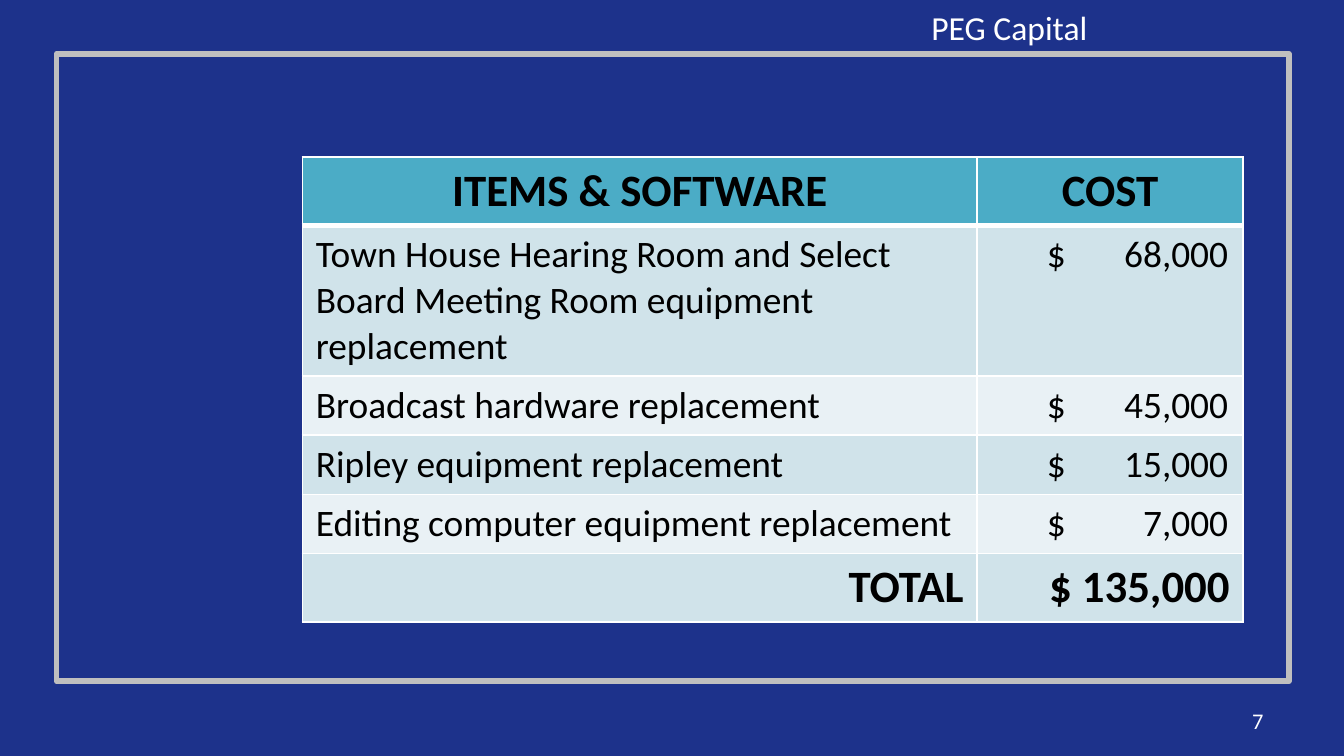
from dataclasses import dataclass

from lxml.etree import SubElement
from pptx import Presentation
from pptx.dml.color import RGBColor
from pptx.enum.shapes import MSO_SHAPE as Shape
from pptx.enum.text import MSO_ANCHOR as Anchor, MSO_AUTO_SIZE as AutoSize, PP_ALIGN as Align
from pptx.oxml.ns import qn
from pptx.util import Inches, Pt

TITLE = "PEG Capital"
PAGE_NUMBER = "7"
HEADER = ("ITEMS & SOFTWARE", "COST")
ITEMS = [
    ("Town House Hearing Room and Select Board Meeting Room equipment replacement", "68,000"),
    ("Broadcast hardware replacement", "45,000"),
    ("Ripley equipment replacement", "15,000"),
    ("Editing computer equipment replacement", "7,000"),
]
TOTAL = ("TOTAL", "$ 135,000")

WIDTH = 10
HEIGHT = WIDTH * 9 / 16
FRAME = (0.42, 0.4, 9.17, 4.67)
TITLE_BOX = (6.83, 0, 1.67, 0.42)
NUMBER_BOX = (7.17, 5.21, 2.33, 0.3)
TABLE_LEFT, TABLE_TOP = 2.25, 1.17
COLUMNS = (5.02, 1.98)
ROWS = (0.5, 1.1, 0.44, 0.44, 0.44, 0.5)
DOLLAR_INSET, AMOUNT_TAB = 0.52, 1.35


@dataclass(frozen=True)
class Theme:
    font: str = "Calibri"
    background: str = "1D328B"
    frame: str = "BFBFBF"
    light: str = "FFFFFF"
    dark: str = "000000"
    header: str = "4BACC6"
    bands: tuple = ("D0E3EA", "E9F1F5")
    heading_size: int = 24
    item_size: int = 20
    title_size: int = 18
    number_size: int = 12


THEME = Theme()


def inches(values):
    return [Inches(value) for value in values]


def write(frame, text, size, color, align=Align.LEFT, bold=False, tab=None):
    """Fill a text frame with one paragraph, with an optional right tab in inches."""
    para = frame.paragraphs[0]
    para.text = text
    para.alignment = align
    if tab:
        tabs = SubElement(para._p.get_or_add_pPr(), qn("a:tabLst"))
        SubElement(tabs, qn("a:tab"), pos=str(Inches(tab)), algn="r")
    font = para.runs[0].font
    for name, value in {"name": THEME.font, "size": Pt(size), "bold": bold}.items():
        setattr(font, name, value)
    font.color.rgb = RGBColor.from_string(color)


def paint_cell(cell, fill, bottom=1, top=1):
    props = cell._tc.get_or_add_tcPr()
    for side, width in {"lnL": 1, "lnR": 1, "lnT": top, "lnB": bottom}.items():
        line = SubElement(props, qn(f"a:{side}"), w=str(Pt(width)))
        SubElement(SubElement(line, qn("a:solidFill")), qn("a:srgbClr"), val=THEME.light)
    cell.fill.solid()
    cell.fill.fore_color.rgb = RGBColor.from_string(fill)


def add_frame(page):
    frame = page.shapes.add_shape(Shape.RECTANGLE, *inches(FRAME))
    frame.shadow.inherit = False
    frame.fill.background()
    frame.line.color.rgb = RGBColor.from_string(THEME.frame)
    frame.line.width = Pt(3)


def add_title(page):
    title = page.shapes.title
    for name, value in zip(("left", "top", "width", "height"), inches(TITLE_BOX)):
        setattr(title, name, value)
    frame = title.text_frame
    frame.auto_size = AutoSize.NONE
    frame.vertical_anchor = Anchor.TOP
    write(frame, TITLE, THEME.title_size, THEME.light)


def add_page_number(page):
    frame = page.shapes.add_textbox(*inches(NUMBER_BOX)).text_frame
    frame.word_wrap = True
    frame.vertical_anchor = Anchor.MIDDLE
    write(frame, PAGE_NUMBER, THEME.number_size, THEME.light, Align.RIGHT)


def add_cost_table(page):
    box = inches((TABLE_LEFT, TABLE_TOP, sum(COLUMNS), sum(ROWS)))
    table = page.shapes.add_table(len(ROWS), len(COLUMNS), *box).table
    for column, width in zip(table.columns, COLUMNS):
        column.width = Inches(width)
    for row, height in zip(table.rows, ROWS):
        row.height = Inches(height)

    last = len(ROWS) - 1
    for index, row in enumerate(table.rows):
        fill = THEME.bands[(index - 1) % 2] if index else THEME.header
        for cell in row.cells:
            paint_cell(cell, fill, bottom=1 if index else 3, top=3 if index == 1 else 1)

    for index, texts, align in ((0, HEADER, Align.CENTER), (last, TOTAL, Align.RIGHT)):
        for cell, text in zip(table.rows[index].cells, texts):
            write(cell.text_frame, text, THEME.heading_size, THEME.dark, align, bold=True)

    for index, (item, amount) in enumerate(ITEMS, 1):
        write(table.cell(index, 0).text_frame, item, THEME.item_size, THEME.dark)
        cost = table.cell(index, 1)
        cost.margin_left = Inches(DOLLAR_INSET)
        write(cost.text_frame, f"$\t{amount}", THEME.item_size, THEME.dark, tab=AMOUNT_TAB)


def main():
    deck = Presentation()
    deck.slide_width, deck.slide_height = inches((WIDTH, HEIGHT))
    page = deck.slides.add_slide(deck.slide_layouts.get_by_name("Title Only"))
    page.background.fill.solid()
    page.background.fill.fore_color.rgb = RGBColor.from_string(THEME.background)
    add_frame(page)
    add_cost_table(page)
    add_page_number(page)
    add_title(page)
    deck.save("out.pptx")


if __name__ == "__main__":
    main()
